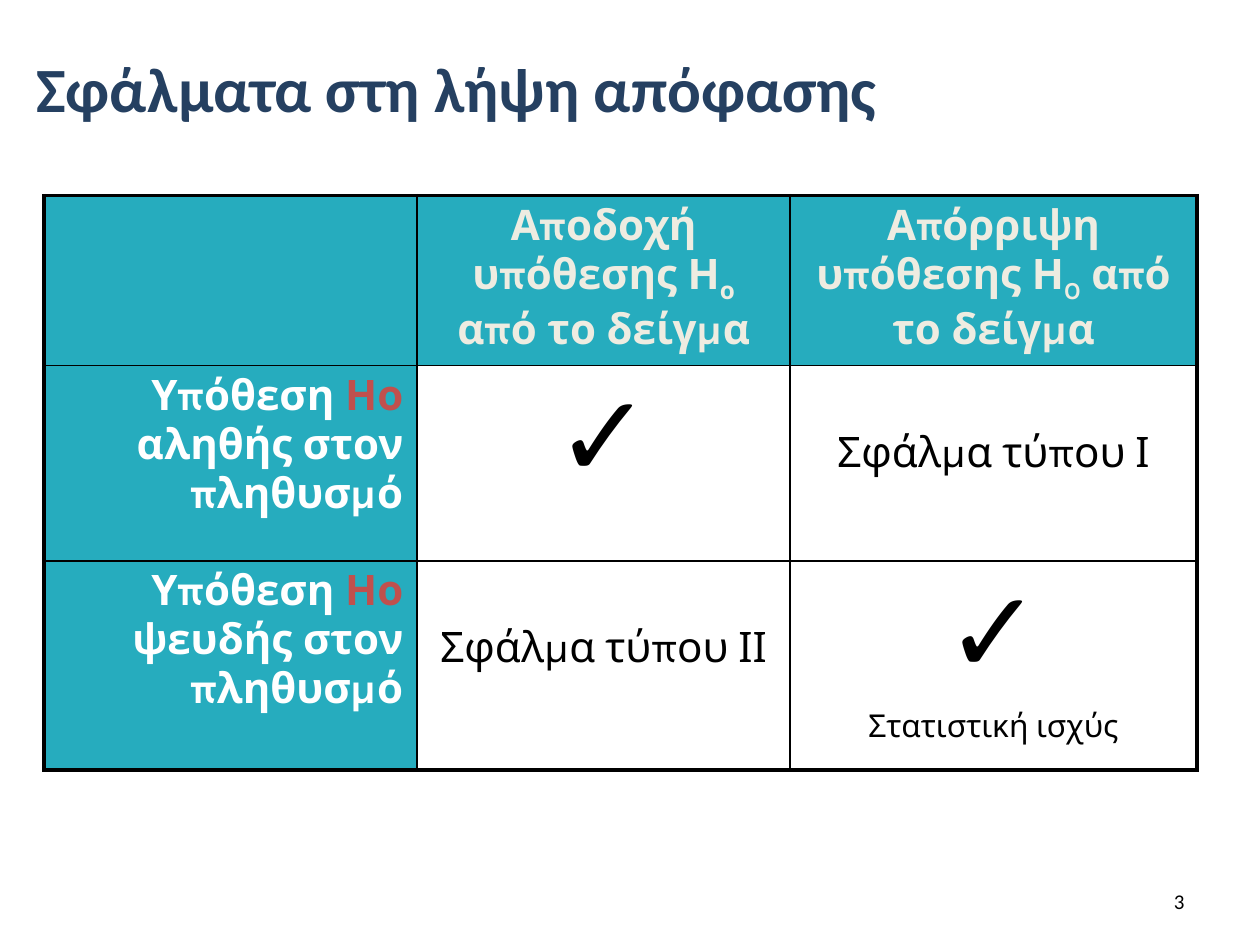
import pptx
import pptx.dml.color
import pptx.enum.text
import pptx.oxml
import pptx.oxml.ns
import pptx.util

Cm = pptx.util.Cm
Pt = pptx.util.Pt
ALIGN = pptx.enum.text.PP_ALIGN
ANCHOR = pptx.enum.text.MSO_ANCHOR

COLORS = {
    "title": "254061",
    "teal": "26ACBE",
    "cream": "EEECE1",
    "white": "FFFFFF",
    "red": "C0504D",
    "black": "000000",
}
THICK, THIN = 2.25, 1
COL_WIDTHS = [7.52, 7.52, 8.2]
ROW_HEIGHTS = [3.43, 3.94, 4.21]
LOW_TEXT = 1.27  # top margin of the cells whose text starts one line down


def rgb(name):
    return pptx.dml.color.RGBColor.from_string(COLORS[name])


def add_run(p, text, size=24, color="black", bold=False, font="Karla", sub=False):
    r = p.add_run()
    r.text = text
    r.font.name = font
    r.font.size = Pt(size)
    r.font.bold = bold
    r.font.color.rgb = rgb(color)
    if sub:
        r.font._element.set("baseline", "-25000")


def add_title(s, text):
    sp = s.shapes.title
    sp.left, sp.top, sp.width, sp.height = Cm(0), Cm(0), Cm(25.4), Cm(3.53)
    tf = sp.text_frame
    tf.auto_size = pptx.enum.text.MSO_AUTO_SIZE.NONE
    tf.vertical_anchor = ANCHOR.MIDDLE
    p = tf.paragraphs[0]
    p.alignment = ALIGN.LEFT
    pPr = p._p.get_or_add_pPr()
    pPr.set("marL", str(Cm(0.48)))
    pPr.set("indent", "0")
    add_run(p, text, size=36, color="title", bold=True, font="Calibri")


def add_page_number(s, text):
    sp = s.shapes.add_textbox(Cm(18.21), Cm(17.65), Cm(5.92), Cm(1.02))
    tf = sp.text_frame
    tf.word_wrap = True
    tf.vertical_anchor = ANCHOR.MIDDLE
    p = tf.paragraphs[0]
    p.alignment = ALIGN.RIGHT
    add_run(p, text, size=12, font="Calibri")


def set_borders(cell, widths):
    """Draw black borders; widths maps L, R, T, B to points."""
    tcPr = cell._tc.get_or_add_tcPr()
    for side, width in widths.items():
        tcPr.append(pptx.oxml.parse_xml(
            f'<a:ln{side} {pptx.oxml.ns.nsdecls("a")} w="{Pt(width)}">'
            f'<a:solidFill><a:srgbClr val="{COLORS["black"]}"/></a:solidFill>'
            f'</a:ln{side}>'))


def fill_cell(cell, paragraphs, align=ALIGN.CENTER, top=0.13):
    """Write paragraphs, each a list of (text, format) runs."""
    cell.margin_left = cell.margin_right = Cm(0.28)
    cell.margin_top, cell.margin_bottom = Cm(top), Cm(0.13)
    tf = cell.text_frame
    for i, runs in enumerate(paragraphs):
        p = tf.add_paragraph() if i else tf.paragraphs[0]
        p.alignment = align
        if i:
            p.space_before = Pt(3.6)
        for text, fmt in runs:
            add_run(p, text, **fmt)


def column_header(start, sub, end):
    fmt = {"color": "cream", "bold": True}
    return {"paragraphs": [[(start, fmt), (sub, {**fmt, "sub": True}), (end, fmt)]]}


def row_header(end):
    fmt = {"color": "white", "bold": True}
    runs = [("Υπόθεση ", fmt), ("Ηο", {**fmt, "color": "red"}), (end, fmt)]
    return {"paragraphs": [runs], "align": ALIGN.RIGHT}


def add_decision_table(s):
    check = [("✓", {"size": 66})]
    cells = [
        [{"paragraphs": []},
         column_header("Αποδοχή υπόθεσης Η", "ο", " από το δείγμα"),
         column_header("Απόρριψη υπόθεσης Η", "O", " από το δείγμα")],
        [row_header(" αληθής στον πληθυσμό"),
         {"paragraphs": [check]},
         {"paragraphs": [[("Σφάλμα τύπου Ι", {})]], "top": LOW_TEXT}],
        [row_header(" ψευδής στον πληθυσμό"),
         {"paragraphs": [[("Σφάλμα τύπου ΙΙ", {})]], "top": LOW_TEXT},
         {"paragraphs": [check, [("Στατιστική ισχύς", {"size": 18})]]}],
    ]
    rows, cols = len(ROW_HEIGHTS), len(COL_WIDTHS)
    table = s.shapes.add_table(rows, cols, Cm(0.89), Cm(3.94),
                               Cm(sum(COL_WIDTHS)), Cm(sum(ROW_HEIGHTS))).table
    table.first_row = table.horz_banding = False
    for col, width in zip(table.columns, COL_WIDTHS):
        col.width = Cm(width)
    for row, height in zip(table.rows, ROW_HEIGHTS):
        row.height = Cm(height)
    for i, row in enumerate(cells):
        for j, content in enumerate(row):
            cell = table.cell(i, j)
            set_borders(cell, {
                "L": THICK if j == 0 else THIN,
                "R": THICK if j == cols - 1 else THIN,
                "T": THICK if i == 0 else THIN,
                "B": THICK if i == rows - 1 else THIN,
            })
            if i == 0 or j == 0:
                cell.fill.solid()
                cell.fill.fore_color.rgb = rgb("teal")
            else:
                cell.fill.background()
            fill_cell(cell, **content)


def main():
    prs = pptx.Presentation()
    prs.slide_width, prs.slide_height = Cm(25.4), Cm(19.05)
    s = prs.slides.add_slide(prs.slide_layouts[5])
    add_decision_table(s)
    add_page_number(s, "3")
    add_title(s, "Σφάλματα στη λήψη απόφασης")
    prs.save("out.pptx")


if __name__ == "__main__":
    main()
